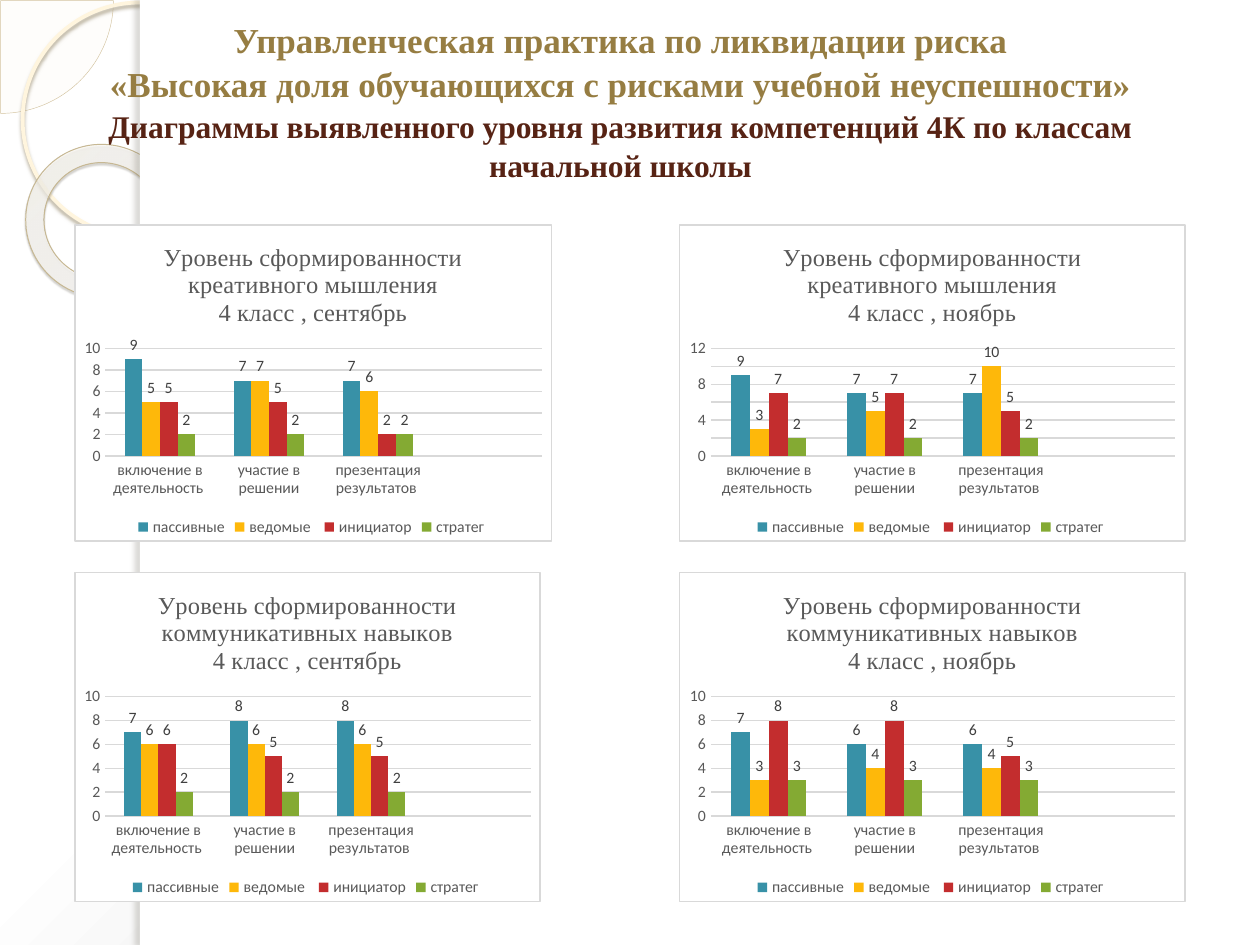
from pptx import Presentation
from pptx import util as u
from pptx.chart.data import CategoryChartData
from pptx.dml.color import RGBColor
from pptx.enum import chart as ch
from pptx.enum import shapes, text
from pptx.oxml import parse_xml
from pptx.oxml.ns import nsdecls, qn

HEX = {
    "white": "FFFFFF", "cream": "FEFAF4", "sand": "D3C39F", "ring": "FFF5DE",
    "donut": "C7B893", "gold": "967D42", "brown": "572314", "grey": "595959",
    "dark": "404040", "grid": "D9D9D9", "black": "000000",
}
SERIES = {
    "пассивные": "3891A7", "ведомые ": "FEB80A",
    "инициатор": "C32D2E", "стратег ": "84AA33",
}
# The last category is left empty
CATS = ["включение в деятельность ", "участие в решении",
        "презентация результатов ", ""]
SERIF, SANS = "Times New Roman", "Calibri"
TITLE = [
    ("Управленческая практика по ликвидации риска", 20, "gold"),
    ("«Высокая доля обучающихся с рисками учебной неуспешности»", 20, "gold"),
    ("Диаграммы выявленного уровня развития компетенций 4К по классам "
     "начальной школы", 18, "brown"),
]
MAKE, TALK = "креативного мышления", "коммуникативных навыков"
LEFT, RIGHT = 0.59, 5.39
TOP, LOW = 1.78, 4.54
# Box, skill, month, axis maximum, one row of values per series
CHARTS = [
    ((LEFT, TOP, 3.79, 2.52), MAKE, "сентябрь", 10,
     [(9, 7, 7), (5, 7, 6), (5, 5, 2), (2, 2, 2)]),
    ((RIGHT, TOP, 4.02, 2.52), MAKE, "ноябрь", 12,
     [(9, 7, 7), (3, 5, 10), (7, 7, 5), (2, 2, 2)]),
    ((LEFT, LOW, 3.7, 2.62), TALK, "сентябрь", 10,
     [(7, 8, 8), (6, 6, 6), (6, 5, 5), (2, 2, 2)]),
    ((RIGHT, LOW, 4.02, 2.62), TALK, "ноябрь", 10,
     [(7, 6, 6), (3, 4, 4), (8, 8, 5), (3, 3, 3)]),
]


def rgb(name):
    return RGBColor.from_string(HEX.get(name, name))


def style(font, color, **vals):
    for key, val in vals.items():
        setattr(font, key, val)
    font.color.rgb = rgb(color)


def paint(line, color, width):
    line.color.rgb = rgb(color)
    line.width = u.Pt(width)


def tint(color, alpha):
    return (f'<a:srgbClr {nsdecls("a")} val="{color}">'
            f'<a:alpha val="{alpha * 1000}"/></a:srgbClr>')


def blend(holder, stops, rect):
    """Swap the fill found in holder for a circular gradient."""
    marks = "".join(f'<a:gs pos="{pos * 1000}">{tint(color, alpha)}</a:gs>'
                    for pos, color, alpha in stops)
    sides = " ".join(f'{side}="{val * 1000}"' for side, val in zip("ltrb", rect))
    new = parse_xml(
        f'<a:gradFill {nsdecls("a")} rotWithShape="1"><a:gsLst>{marks}</a:gsLst>'
        f'<a:path path="circle"><a:fillToRect {sides}/></a:path></a:gradFill>')
    old = holder.find(qn("a:solidFill"))
    holder.replace(old, new)


def shade(shape, color, alpha, blur, dist, angle):
    box = shape._element.spPr.find(qn("a:effectLst"))
    box.append(parse_xml(
        f'<a:outerShdw {nsdecls("a")} blurRad="{u.Pt(blur)}" '
        f'dist="{u.Pt(dist)}" dir="{angle * 60000}" algn="tl" '
        f'rotWithShape="0">{tint(color, alpha)}</a:outerShdw>'))


def add_form(slide, kind, box, fill=None, line=None, adjs=()):
    shape = slide.shapes.add_shape(kind, *map(u.Inches, box))
    shape.shadow.inherit = False
    for i, val in enumerate(adjs):
        shape.adjustments[i] = val
    if fill:
        shape.fill.solid()
        shape.fill.fore_color.rgb = rgb(fill)
    else:
        shape.fill.background()
    if line:
        paint(shape.line, *line)
    else:
        shape.line.fill.background()
    return shape


def add_decor(slide):
    kind = shapes.MSO_SHAPE
    # Corner quarter disc
    disc = add_form(slide, kind.PIE, (-0.89, -0.89, 1.79, 1.79), "cream",
                    ("sand", 0.25), (0, 54.02))
    color = disc._element.spPr.find(qn("a:solidFill"))
    color.replace(color[0], parse_xml(tint(HEX["cream"], 33)))
    # Thin ring and thick ring
    ring = add_form(slide, kind.OVAL, (0.18, 0.02, 1.86, 1.86),
                    line=("ring", 2.15))
    shade(ring, "B0A68F", 85, 2, 2, 90)
    donut = add_form(slide, kind.DONUT, (0.2, 1.15, 1.23, 1.21), "cream",
                     ("donut", 0.58), (0.12,))
    donut.rotation = 38.6
    blend(donut._element.spPr,
          [(0, "FFFCF6", 70), (70, "FFFEFB", 55), (100, "F0D28E", 60)],
          (-408, -50, 508, 150))
    shade(donut, "5A5444", 35, 1, 1.2, 75)
    # White page with a shaded left edge
    add_form(slide, kind.RECTANGLE, (1.11, 0, 8.89, 7.5), "white")
    edge = add_form(slide, kind.RECTANGLE, (1.11, 0, 0.08, 7.5), "white")
    shade(edge, "736F63", 25, 3, 3, 180)


def add_title(slide):
    box = slide.shapes.add_textbox(*map(u.Inches, (0.51, 0.29, 8.83, 1.25)))
    frame = box.text_frame
    form = {"word_wrap": True, "margin_top": 0, "margin_bottom": u.Inches(0.24),
            "vertical_anchor": text.MSO_ANCHOR.MIDDLE}
    for key, val in form.items():
        setattr(frame, key, val)
    for i, (words, size, color) in enumerate(TITLE):
        para = frame.paragraphs[0] if i == 0 else frame.add_paragraph()
        para.alignment = text.PP_ALIGN.CENTER
        para.line_spacing = 1.05
        run = para.add_run()
        run.text = words
        style(run.font, color, name=SERIF, size=u.Pt(size), bold=True)


def set_axes(chart, top):
    for axis in (chart.category_axis, chart.value_axis):
        axis.major_tick_mark = axis.minor_tick_mark = ch.XL_TICK_MARK.NONE
        style(axis.tick_labels.font, "grey", name=SANS, size=u.Pt(9))
    paint(chart.category_axis.format.line, "grid", 0.75)
    scale = chart.value_axis
    scale.minimum_scale, scale.maximum_scale, scale.major_unit = 0, top, 2
    scale.format.line.fill.background()
    paint(scale.major_gridlines.format.line, "grid", 0.75)


def add_bars(slide, box, skill, month, top, rows):
    data = CategoryChartData()
    data.categories = CATS
    for name, vals in zip(SERIES, rows):
        data.add_series(name, vals + (None,))
    chart = slide.shapes.add_chart(ch.XL_CHART_TYPE.COLUMN_CLUSTERED,
                                   *map(u.Inches, box), data).chart
    style(chart.font, "black", name=SANS, size=u.Pt(10))
    # Chart frame
    chart._chartSpace.find(qn("c:chart")).addnext(parse_xml(
        f'<c:spPr {nsdecls("c", "a")}><a:solidFill><a:srgbClr val="{HEX["white"]}"/>'
        f'</a:solidFill><a:ln w="{u.Pt(0.75)}"><a:solidFill>'
        f'<a:srgbClr val="{HEX["grid"]}"/></a:solidFill></a:ln></c:spPr>'))
    # Title and legend
    frame = chart.chart_title.text_frame
    frame.text = f"Уровень сформированности {skill}\n4 класс , {month}"
    for para in frame.paragraphs:
        style(para.runs[0].font, "grey", name=SERIF, size=u.Pt(14), bold=False)
    chart.has_legend = True
    chart.legend.position = ch.XL_LEGEND_POSITION.BOTTOM
    chart.legend.include_in_layout = False
    style(chart.legend.font, "grey", name=SANS, size=u.Pt(9))
    set_axes(chart, top)
    # Columns and their labels
    plot = chart.plots[0]
    plot.gap_width, plot.overlap, plot.vary_by_categories = 219, 0, False
    for bars, color in zip(plot.series, SERIES.values()):
        bars.format.fill.solid()
        bars.format.fill.fore_color.rgb = rgb(color)
        bars.invert_if_negative = False
        tags = bars.data_labels
        tags.show_value = True
        tags.position = ch.XL_LABEL_POSITION.OUTSIDE_END
        style(tags.font, "dark", name=SANS, size=u.Pt(9))


def main():
    deck = Presentation()
    deck.slide_width, deck.slide_height = u.Inches(10), u.Inches(7.5)
    slide = deck.slides.add_slide(deck.slide_layouts[6])
    back = slide.background.fill
    back.solid()
    back.fore_color.rgb = rgb("white")
    blend(slide._element.cSld.bg.bgPr,
          [(0, "FFFFFF", 100), (40, "FFFFFF", 100), (100, "C5C5C5", 100)],
          (-24, -20, 124, 120))
    add_decor(slide)
    add_title(slide)
    for item in CHARTS:
        add_bars(slide, *item)
    deck.save("out.pptx")


if __name__ == "__main__":
    main()
